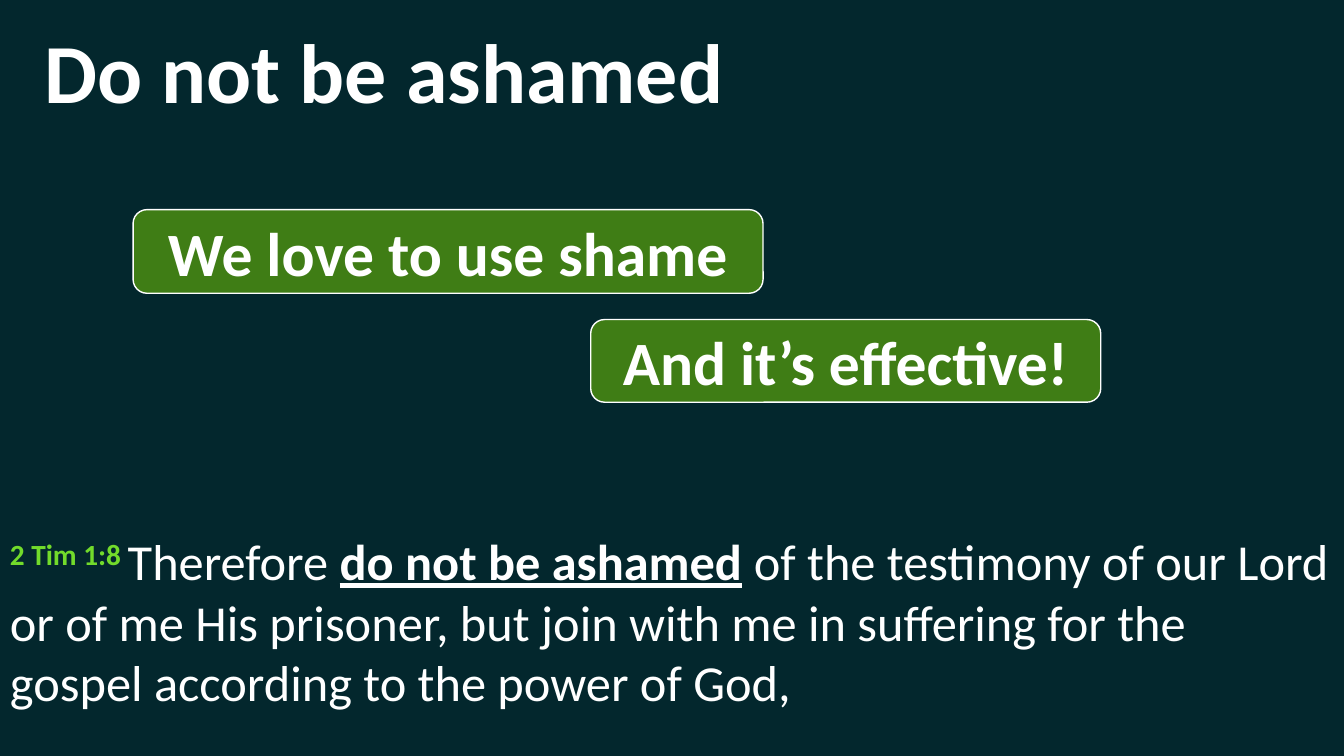
from dataclasses import dataclass

import pptx
import pptx.dml.color
import pptx.enum.shapes
import pptx.enum.text
import pptx.util

COLUMNS, ROWS = 160, 90
RGB = pptx.dml.color.RGBColor.from_string
ALIGN = pptx.enum.text.PP_ALIGN
ANCHOR = pptx.enum.text.MSO_ANCHOR
OUTLINE = pptx.enum.shapes.MSO_SHAPE


@dataclass(frozen=True)
class Theme:
    font: str = "Calibri"
    night: str = "03272D"
    leaf: str = "3F7D15"
    lime: str = "72DB2B"
    white: str = "FFFFFF"
    title_size: int = 60
    callout_size: int = 44
    verse_size: int = 36
    border_width: int = 1


@dataclass(frozen=True)
class Area:
    """Place on the grid, in columns and rows."""
    column: float
    row: float
    columns: float
    rows: float


@dataclass(frozen=True)
class Callout:
    words: str
    area: Area


@dataclass(frozen=True)
class Phrase:
    words: str
    color: str
    bold: bool = False
    underline: bool = False
    raised: bool = False
    new_line: bool = False


THEME = Theme()
TITLE_AREA = Area(1.08, 1.68, 91.56, 13.32)
VERSE_AREA = Area(0, 57.84, COLUMNS, ROWS - 57.84)
CALLOUTS = [
    Callout("We love to use shame", Area(15.84, 24.96, 75, 9.96)),
    Callout("And it’s effective!", Area(70.32, 38.04, 60.72, 9.84)),
]
VERSE = [
    Phrase("2 Tim 1:8 ", THEME.lime, bold=True, raised=True),
    Phrase("Therefore ", THEME.white),
    Phrase("do not be ashamed", THEME.white, bold=True, underline=True),
    Phrase(" of the testimony of our Lord or of me His prisoner, "
           "but join with me in suffering for the", THEME.white),
    Phrase("gospel according to the power of God,", THEME.white, new_line=True),
]

# Slide
deck = pptx.Presentation()
deck.slide_width = pptx.util.Inches(13.33)
deck.slide_height = pptx.util.Inches(7.5)
slide = deck.slides.add_slide(deck.slide_layouts[6])
slide.background.fill.solid()
slide.background.fill.fore_color.rgb = RGB(THEME.night)


def place(area: Area) -> tuple[int, int, int, int]:
    across, down = deck.slide_width / COLUMNS, deck.slide_height / ROWS
    return (round(area.column * across), round(area.row * down),
            round(area.columns * across), round(area.rows * down))


def style(run: pptx.text.text._Run, size: int, color: str, bold: bool) -> None:
    run.font.name = THEME.font
    run.font.size = pptx.util.Pt(size)
    run.font.color.rgb = RGB(color)
    run.font.bold = bold


def write_line(frame: pptx.text.text.TextFrame, words: str, size: int) -> None:
    frame.text = words
    frame.paragraphs[0].alignment = ALIGN.CENTER
    style(frame.paragraphs[0].runs[0], size, THEME.white, True)


def draw_panel(outline: OUTLINE, area: Area, fill: str) -> pptx.shapes.autoshape.Shape:
    panel = slide.shapes.add_shape(outline, *place(area))
    panel.shadow.inherit = False
    panel.fill.solid()
    panel.fill.fore_color.rgb = RGB(fill)
    panel.line.fill.background()
    panel.text_frame.word_wrap = True
    panel.text_frame.vertical_anchor = ANCHOR.MIDDLE
    return panel


def draw_verse(phrases: list[Phrase]) -> None:
    panel = draw_panel(OUTLINE.RECTANGLE, VERSE_AREA, THEME.night)
    passage = panel.text_frame.paragraphs[0]
    passage.alignment = ALIGN.LEFT
    for phrase in phrases:
        if phrase.new_line:
            passage.add_line_break()
        run = passage.add_run()
        run.text = phrase.words
        style(run, THEME.verse_size, phrase.color, phrase.bold)
        run.font.underline = phrase.underline
        if phrase.raised:
            run.font._element.set("baseline", "30000")


def draw_callout(callout: Callout) -> None:
    panel = draw_panel(OUTLINE.ROUNDED_RECTANGLE, callout.area, THEME.leaf)
    panel.line.color.rgb = RGB(THEME.white)
    panel.line.width = pptx.util.Pt(THEME.border_width)
    write_line(panel.text_frame, callout.words, THEME.callout_size)


# Verse along the bottom
draw_verse(VERSE)

# Callouts
for callout in CALLOUTS:
    draw_callout(callout)

# Title
title = slide.shapes.add_textbox(*place(TITLE_AREA))
title.text_frame.word_wrap = True
write_line(title.text_frame, "Do not be ashamed ", THEME.title_size)

deck.save("out.pptx")
